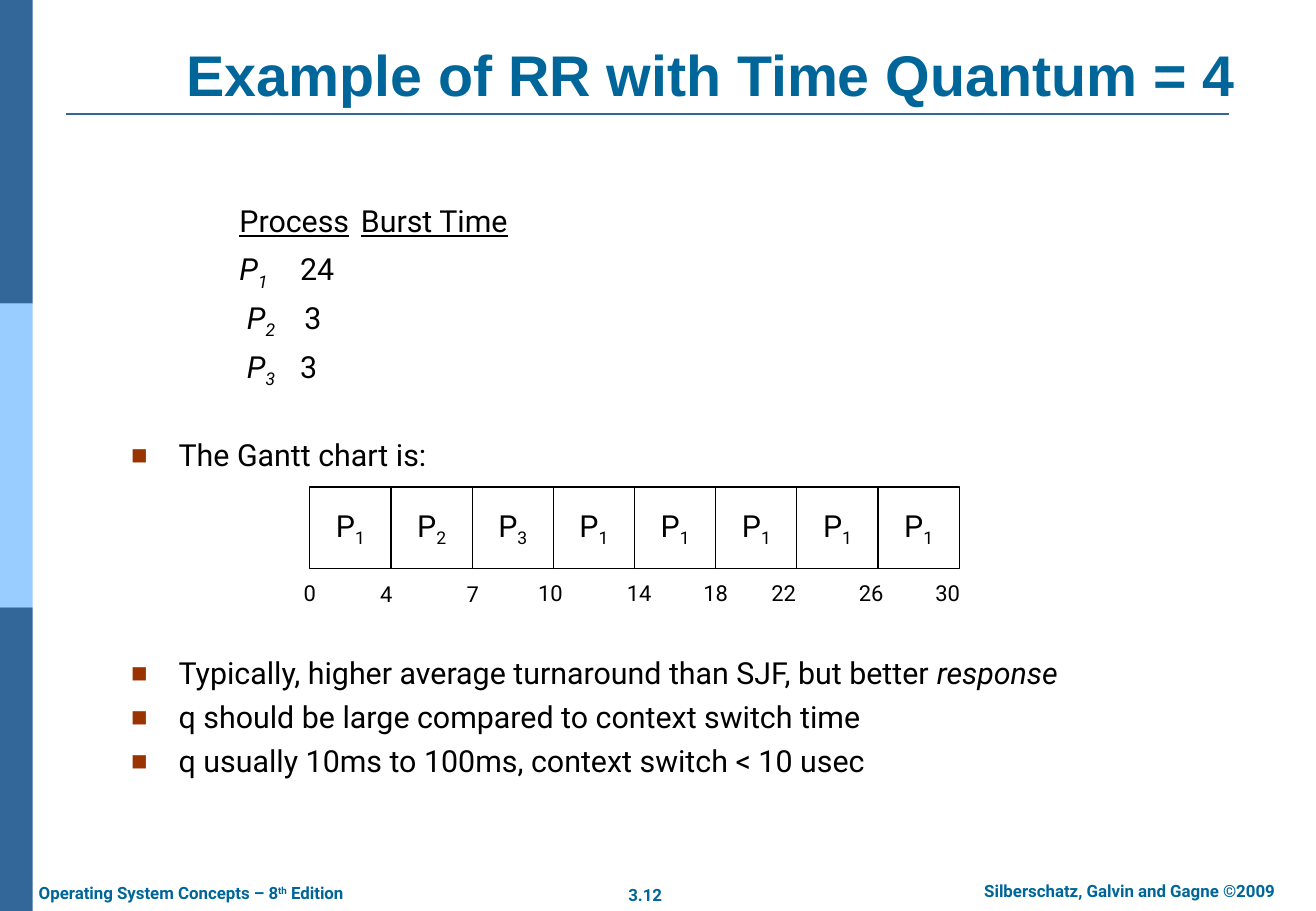
from dataclasses import dataclass

from lxml import etree
from pptx import Presentation
from pptx.dml.color import RGBColor
from pptx.enum.shapes import MSO_CONNECTOR, MSO_SHAPE
from pptx.enum.text import MSO_ANCHOR, MSO_AUTO_SIZE, PP_ALIGN
from pptx.oxml.ns import qn
from pptx.util import Inches, Pt

LEFT, CENTER = PP_ALIGN.LEFT, PP_ALIGN.CENTER
TOP, MIDDLE, BOTTOM = MSO_ANCHOR.TOP, MSO_ANCHOR.MIDDLE, MSO_ANCHOR.BOTTOM
RECTANGLE = MSO_SHAPE.RECTANGLE
STRAIGHT = MSO_CONNECTOR.STRAIGHT
NO_AUTOFIT = MSO_AUTO_SIZE.NONE


@dataclass(frozen=True)
class Theme:
    heading: str = "006699"
    band_dark: str = "336699"
    band_light: str = "99CCFF"
    bullet: str = "993300"
    ink: str = "000000"
    paper: str = "FFFFFF"
    title_font: str = "Arial"
    body_font: str = "Roboto"
    title_size: int = 34
    body_size: int = 18
    time_size: int = 13
    footer_size: int = 10


THEME = Theme()
BASELINES = {"sub": "-25000", "sup": "30000"}

TITLE = "Example of RR with Time Quantum = 4"
BURST_TABLE = [
    [("\t\t", ""), ("Process", "u"), ("\t", ""), ("Burst Time", "u")],
    [("\t\tP", "i"), ("1\t", "i sub"), ("24", "")],
    [("\t\t ", ""), ("P", "i"), ("2\t ", "i sub"), ("3", "")],
    [("\t\t ", ""), ("P", "i"), ("3\t", "i sub"), ("3", "")],
]
GANTT_INTRO = [("The Gantt chart is:", "")]
REMARKS = [
    [("Typically, higher average turnaround than SJF, but better ", ""), ("response", "i")],
    [("q should be large compared to context switch time", "")],
    [("q usually 10ms to 100ms, context switch < 10 usec", "")],
]
GANTT_PROCESSES = ["1", "2", "3", "1", "1", "1", "1", "1"]
GANTT_TIMES = [
    ("0", 2.55, 4.72), ("4", 3.18, 4.73), ("7", 3.89, 4.73),
    ("10", 4.53, 4.72), ("14", 5.26, 4.72), ("18", 5.89, 4.72),
    ("22", 6.45, 4.72), ("26", 7.17, 4.72), ("30", 7.8, 4.72),
]
FOOTERS = [
    ([("3.12", "")], (5.06, 7.23, 0.5, 0.27), CENTER),
    ([("Silberschatz, Galvin and Gagne ©2009", "")], (7.76, 7.2, 3.07, 0.28), CENTER),
    ([("Operating System Concepts – 8", ""), ("th", "sup"), (" Edition", "")],
     (0.22, 7.22, 2.91, 0.28), LEFT),
]
BANDS = [THEME.band_dark, THEME.band_light, THEME.band_dark]

SLIDE_WIDTH, SLIDE_HEIGHT = 10.83, 7.5
BAND_WIDTH = 0.27
GANTT_LEFT, GANTT_TOP, GANTT_CELL = 2.55, 4.01, 0.67
GANTT_STEP = 0.668
TIME_WIDTH, TIME_HEIGHT = 0.4, 0.32
HANGING = 0.39
ROW_GAP, GANTT_INTRO_GAP, REMARKS_GAP = 6.8, 32.6, 109.6


def rgb(code):
    return RGBColor.from_string(code)


def box(bounds):
    return [Inches(length) for length in bounds]


def write(paragraph, runs, size=THEME.body_size, font=THEME.body_font,
          color=THEME.ink, bold=False, align=LEFT):
    paragraph.alignment = align
    for text, style in runs:
        marks = style.split()
        run = paragraph.add_run()
        run.text = text
        run.font.name = font
        run.font.size = Pt(size)
        run.font.bold = bold
        run.font.italic = "i" in marks
        run.font.underline = "u" in marks
        run.font.color.rgb = rgb(color)
        for mark in marks:
            if mark in BASELINES:
                run.font._element.set("baseline", BASELINES[mark])


def set_frame(shape, anchor=TOP, wrap=True):
    frame = shape.text_frame
    frame.auto_size = NO_AUTOFIT
    frame.word_wrap = wrap
    frame.vertical_anchor = anchor
    return frame


def place(shape, bounds):
    shape.left, shape.top, shape.width, shape.height = box(bounds)


def add_rectangle(slide, bounds, fill, outline=None):
    rectangle = slide.shapes.add_shape(RECTANGLE, *box(bounds))
    rectangle.shadow.inherit = False
    rectangle.fill.solid()
    rectangle.fill.fore_color.rgb = rgb(fill)
    if outline:
        rectangle.line.color.rgb = rgb(outline)
        rectangle.line.width = Pt(0.75)
    else:
        rectangle.line.fill.background()
    return rectangle


def add_label(slide, bounds, runs, anchor=TOP, wrap=True, **text_format):
    label = slide.shapes.add_textbox(*box(bounds))
    write(set_frame(label, anchor, wrap).paragraphs[0], runs, **text_format)


def set_bullet(paragraph, bulleted):
    properties = paragraph._p.get_or_add_pPr()
    properties.set("marL", str(Inches(HANGING)))
    properties.set("indent", str(-Inches(HANGING)))
    if bulleted:
        color = etree.SubElement(properties, qn("a:buClr"))
        etree.SubElement(color, qn("a:srgbClr"), val=THEME.bullet)
        etree.SubElement(properties, qn("a:buSzPct"), val="90000")
        etree.SubElement(properties, qn("a:buChar"), char="■")
    else:
        etree.SubElement(properties, qn("a:buNone"))


def add_backdrop(slide):
    band_height = SLIDE_HEIGHT / len(BANDS)
    for index, color in enumerate(BANDS):
        add_rectangle(slide, (0, index * band_height, BAND_WIDTH, band_height), color)
    rule = slide.shapes.add_connector(STRAIGHT, *box((0.54, 0.94, 10.11, 0.94)))
    rule.line.color.rgb = rgb(THEME.band_dark)
    rule.line.width = Pt(1.5)
    etree.SubElement(rule._element.spPr, qn("a:effectLst"))
    for runs, bounds, align in FOOTERS:
        add_label(slide, bounds, runs, size=THEME.footer_size,
                  color=THEME.heading, bold=True, align=align)


def fill_body(body):
    place(body, (0.98, 1.65, 8.71, 4.9))
    frame = set_frame(body)
    rows = [(runs, False, ROW_GAP) for runs in BURST_TABLE]
    rows.append((GANTT_INTRO, True, GANTT_INTRO_GAP))
    rows += [(runs, True, ROW_GAP if index else REMARKS_GAP)
             for index, runs in enumerate(REMARKS)]
    for index, (runs, bulleted, gap) in enumerate(rows):
        paragraph = frame.add_paragraph() if index else frame.paragraphs[0]
        set_bullet(paragraph, bulleted)
        paragraph.line_spacing = 0.9
        paragraph.space_before = Pt(gap if index else 0)
        write(paragraph, runs)


def add_gantt(slide):
    for index, process in enumerate(GANTT_PROCESSES):
        cell = add_rectangle(
            slide, (GANTT_LEFT + index * GANTT_STEP, GANTT_TOP, GANTT_CELL, GANTT_CELL),
            THEME.paper, THEME.ink)
        write(set_frame(cell, MIDDLE, False).paragraphs[0],
              [("P", ""), (process, "sub")], align=CENTER)
    for time, middle, top in GANTT_TIMES:
        add_label(slide, (middle - TIME_WIDTH / 2, top, TIME_WIDTH, TIME_HEIGHT),
                  [(time, "")], anchor=MIDDLE, wrap=False,
                  size=THEME.time_size, align=CENTER)


def main():
    deck = Presentation()
    deck.slide_width, deck.slide_height = Inches(SLIDE_WIDTH), Inches(SLIDE_HEIGHT)
    slide = deck.slides.add_slide(deck.slide_layouts[1])
    title, body = slide.placeholders
    add_backdrop(slide)
    place(title, (1.08, 0.02, 9.54, 0.92))
    write(set_frame(title, BOTTOM).paragraphs[0], [(TITLE, "")], size=THEME.title_size,
          font=THEME.title_font, color=THEME.heading, bold=True, align=CENTER)
    fill_body(body)
    add_gantt(slide)
    deck.save("out.pptx")


if __name__ == "__main__":
    main()
